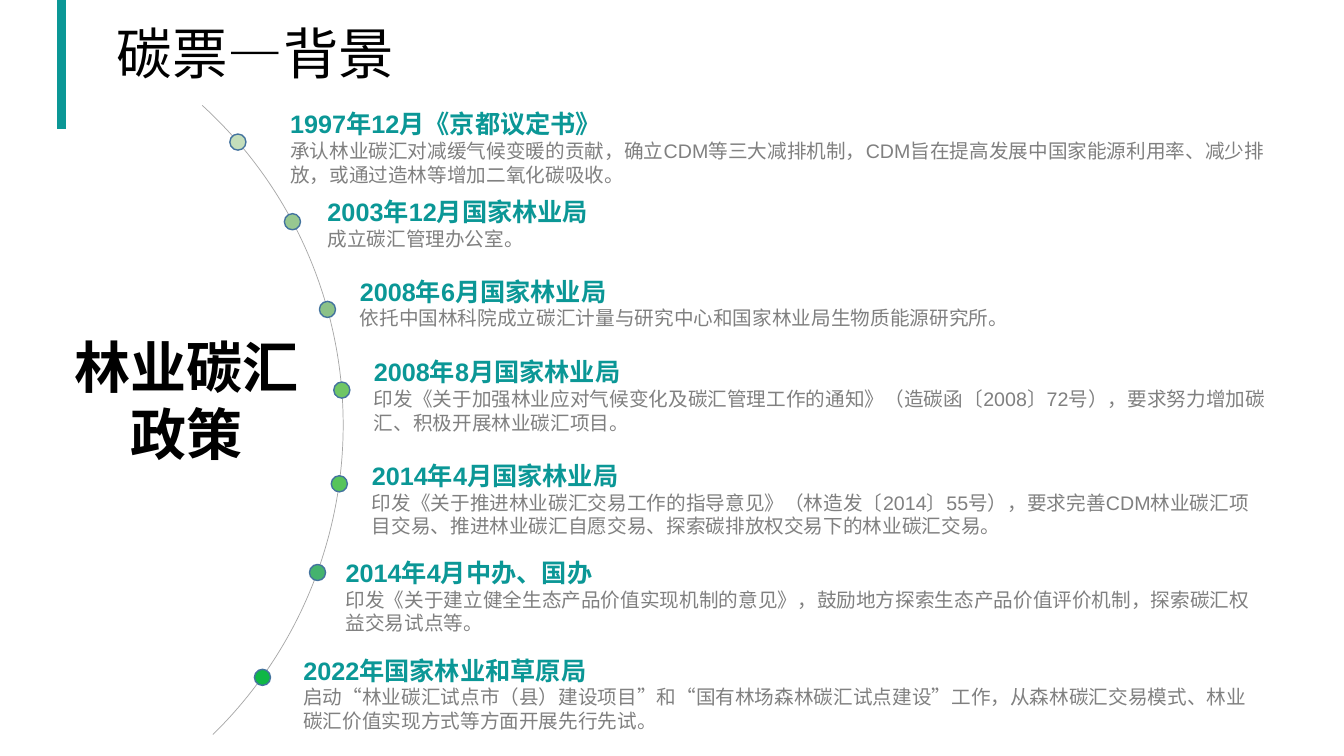
from dataclasses import dataclass
from math import sqrt

from pptx import Presentation
from pptx.dml.color import RGBColor
from pptx.enum.shapes import MSO_CONNECTOR, MSO_SHAPE
from pptx.enum.text import MSO_ANCHOR, MSO_AUTO_SIZE, PP_ALIGN
from pptx.oxml.ns import qn
from pptx.slide import Slide
from pptx.text.text import TextFrame, _Paragraph
from pptx.util import Inches, Pt


@dataclass(frozen=True)
class TextStyle:
    size: float
    color: str
    bold: bool = False
    font: str = "Arial"


@dataclass(frozen=True)
class Theme:
    accent: str = "0B9796"
    arc_line: str = "A6A6A6"
    dot_line: str = "43739E"
    title: TextStyle = TextStyle(39.6, "000000", font="Calibri")
    topic: TextStyle = TextStyle(40, "000000", bold=True)
    heading: TextStyle = TextStyle(18, "0B9796", bold=True)
    detail: TextStyle = TextStyle(14, "808080")


@dataclass(frozen=True)
class Box:
    left: float
    top: float
    width: float
    height: float

    def lengths(self) -> list[int]:
        return [Inches(v) for v in (self.left, self.top, self.width, self.height)]


@dataclass(frozen=True)
class Milestone:
    dot_top: float
    dot_color: str
    left: float
    top: float
    heading: str
    detail: str
    detail_lines: int = 2
    right: float = 12.65


THEME = Theme()
ARC = Box(-5.19, -0.08, 8.59, 8.6)
DOT_SIZE = 0.16
HEADING_HEIGHT, DETAIL_LINE_HEIGHT = 0.41, 0.23

MILESTONES = [
    Milestone(1.33, "C4DEBB", 2.78, 1.03, "1997年12月《京都议定书》",
              "承认林业碳汇对减缓气候变暖的贡献，确立CDM等三大减排机制，CDM旨在提高发展中国家"
              "能源利用率、减少排放，或通过造林等增加二氧化碳吸收。"),
    Milestone(2.12, "97C890", 3.15, 1.9, "2003年12月国家林业局",
              "成立碳汇管理办公室。", detail_lines=1, right=7.59),
    Milestone(2.99, "8CC288", 3.47, 2.69, "2008年6月国家林业局",
              "依托中国林科院成立碳汇计量与研究中心和国家林业局生物质能源研究所。", detail_lines=1),
    Milestone(3.79, "6FC665", 3.61, 3.49, "2008年8月国家林业局",
              "印发《关于加强林业应对气候变化及碳汇管理工作的通知》（造碳函〔2008〕72号），"
              "要求努力增加碳汇、积极开展林业碳汇项目。"),
    Milestone(4.72, "57C45B", 3.59, 4.52, "2014年4月国家林业局",
              "印发《关于推进林业碳汇交易工作的指导意见》（林造发〔2014〕55号），要求完善CDM"
              "林业碳汇项目交易、推进林业碳汇自愿交易、探索碳排放权交易下的林业碳汇交易。"),
    Milestone(5.6, "44B36E", 3.33, 5.48, "2014年4月中办、国办",
              "印发《关于建立健全生态产品价值实现机制的意见》，鼓励地方探索生态产品价值评价机制，"
              "探索碳汇权益交易试点等。"),
    Milestone(6.64, "0FB746", 2.91, 6.45, "2022年国家林业和草原局",
              "启动“林业碳汇试点市（县）建设项目”和“国有林场森林碳汇试点建设”工作，从森林碳汇"
              "交易模式、林业碳汇价值实现方式等方面开展先行先试。"),
]


def write(paragraph: _Paragraph, text: str, style: TextStyle) -> None:
    run = paragraph.add_run()
    run.text = text
    formats = {"name": style.font, "size": Pt(style.size), "bold": style.bold}
    for attribute, value in formats.items():
        setattr(run.font, attribute, value)
    run.font.color.rgb = RGBColor.from_string(style.color)


def add_text(slide: Slide, box: Box, lines: list[tuple[str, TextStyle]],
             align: PP_ALIGN = PP_ALIGN.LEFT) -> None:
    frame: TextFrame = slide.shapes.add_textbox(*box.lengths()).text_frame
    frame.word_wrap = True
    frame.auto_size = MSO_AUTO_SIZE.SHAPE_TO_FIT_TEXT
    for index, (text, style) in enumerate(lines):
        paragraph = frame.add_paragraph() if index else frame.paragraphs[0]
        paragraph.alignment = align
        write(paragraph, text, style)


def add_title(slide: Slide, text: str) -> None:
    title = slide.shapes.title
    title.left, title.top, title.width, title.height = Box(1.06, 0.16, 11.6, 0.8).lengths()
    formats = {"vertical_anchor": MSO_ANCHOR.MIDDLE, "word_wrap": True,
               "auto_size": MSO_AUTO_SIZE.NONE}
    for attribute, value in formats.items():
        setattr(title.text_frame, attribute, value)
    paragraph = title.text_frame.paragraphs[0]
    paragraph.alignment = PP_ALIGN.LEFT
    paragraph.line_spacing = 0.9
    write(paragraph, text, THEME.title)


def add_accent_bar(slide: Slide) -> None:
    bar = slide.shapes.add_connector(
        MSO_CONNECTOR.STRAIGHT, Inches(0.61), 0, Inches(0.61), Inches(1.28))
    bar.line.color.rgb = RGBColor.from_string(THEME.accent)
    bar.line.width = Pt(6)
    properties = bar._element.spPr
    properties.append(properties.makeelement(qn("a:effectLst"), {}))


def add_arc(slide: Slide) -> None:
    arc = slide.shapes.add_shape(MSO_SHAPE.ARC, *ARC.lengths())
    arc.rotation = 56
    arc.adjustments[0], arc.adjustments[1] = 153.85, 209.75
    arc.shadow.inherit = False
    arc.fill.background()
    arc.line.color.rgb = RGBColor.from_string(THEME.arc_line)
    arc.line.width = Pt(0.5)


def arc_x(y: float) -> float:
    """Return where the arc's right side lies at height y."""
    radius = ARC.height / 2
    rise = y - (ARC.top + radius)
    return ARC.left + ARC.width / 2 + sqrt(radius ** 2 - rise ** 2)


def add_dot(slide: Slide, milestone: Milestone) -> None:
    left = arc_x(milestone.dot_top + DOT_SIZE / 2) - DOT_SIZE / 2
    box = Box(left, milestone.dot_top, DOT_SIZE, DOT_SIZE)
    dot = slide.shapes.add_shape(MSO_SHAPE.OVAL, *box.lengths())
    dot.shadow.inherit = False
    dot.fill.solid()
    dot.fill.fore_color.rgb = RGBColor.from_string(milestone.dot_color)
    dot.line.color.rgb = RGBColor.from_string(THEME.dot_line)
    dot.line.width = Pt(1)


def add_milestone(slide: Slide, milestone: Milestone) -> None:
    add_dot(slide, milestone)
    height = HEADING_HEIGHT + DETAIL_LINE_HEIGHT * milestone.detail_lines
    box = Box(milestone.left, milestone.top, milestone.right - milestone.left, height)
    add_text(slide, box, [(milestone.heading, THEME.heading),
                          (milestone.detail, THEME.detail)])


def main() -> None:
    presentation = Presentation()
    presentation.slide_width = Inches(13.33)
    presentation.slide_height = Inches(7.5)
    title_only = presentation.slide_layouts[5]
    slide = presentation.slides.add_slide(title_only)

    add_accent_bar(slide)
    add_title(slide, "碳票—背景")
    add_arc(slide)
    for milestone in MILESTONES:
        add_milestone(slide, milestone)
    add_text(slide, Box(0.62, 3.25, 2.46, 1.45),
             [("林业碳汇", THEME.topic), ("政策", THEME.topic)], PP_ALIGN.CENTER)

    presentation.save("out.pptx")


if __name__ == "__main__":
    main()
